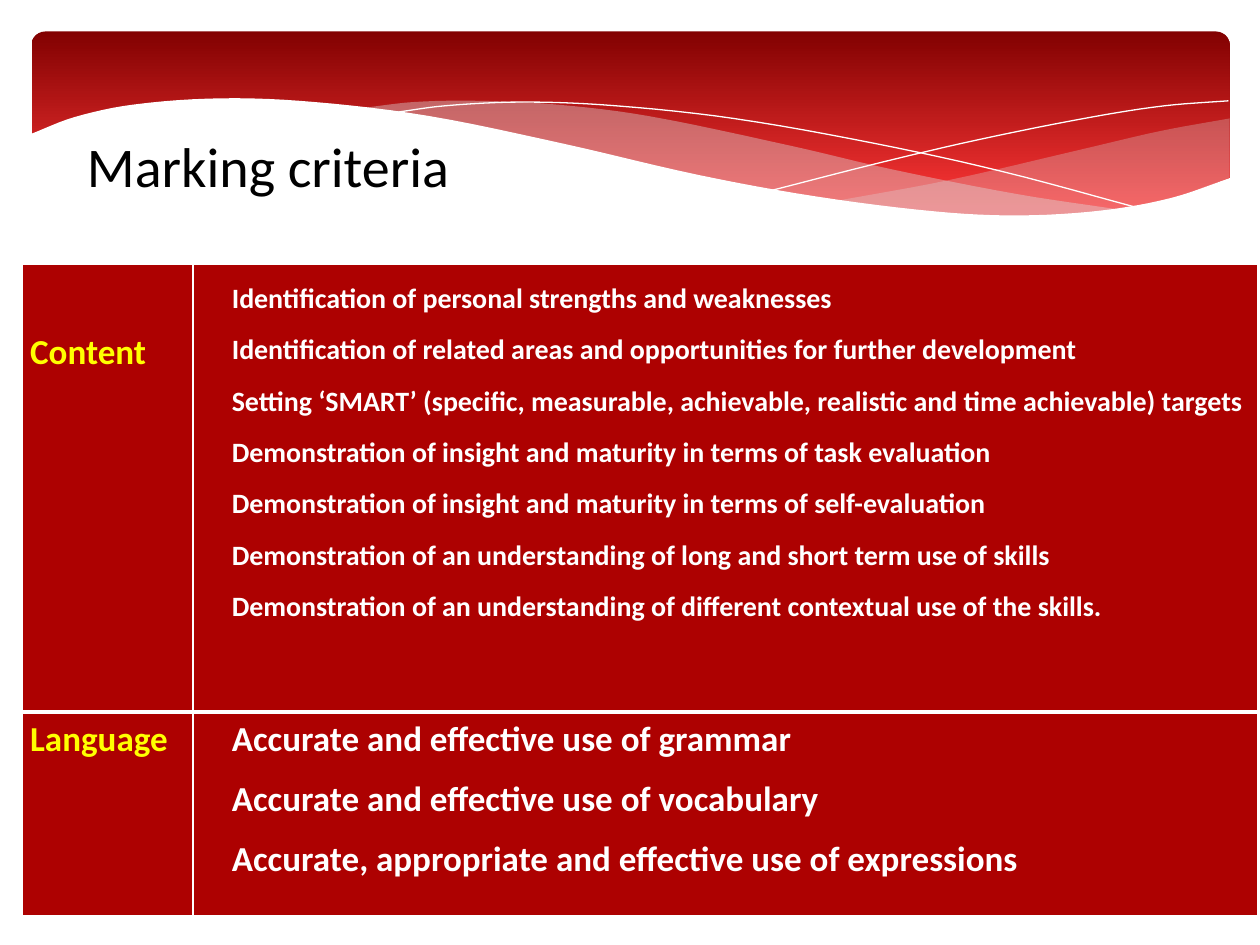
"""Build the marking criteria slide with a wave banner and a two-row table."""

from dataclasses import dataclass

import lxml.etree
import pptx
import pptx.dml.color
import pptx.enum.shapes
import pptx.enum.text
import pptx.oxml
import pptx.oxml.ns
import pptx.presentation
import pptx.shapes.autoshape
import pptx.slide
import pptx.table
import pptx.util

Inches = pptx.util.Inches
Pt = pptx.util.Pt
RGBColor = pptx.dml.color.RGBColor
Point = tuple[float, float]

FONT = "Calibri"
BLACK = RGBColor(0x00, 0x00, 0x00)
WHITE = RGBColor(0xFF, 0xFF, 0xFF)
YELLOW = RGBColor(0xFF, 0xFF, 0x00)
MIST = RGBColor(0xDE, 0xDE, 0xE0)
CELL_RED = RGBColor(0xAD, 0x01, 0x01)
DARK_RED = RGBColor(0x82, 0x01, 0x01)
BRIGHT_RED = RGBColor(0xFE, 0x37, 0x37)
STEPS_PER_SPAN = 6


@dataclass(frozen=True)
class Wave:
    """A smooth upper edge, closed by a lower edge when it is filled."""

    upper: tuple[Point, ...]
    lower: tuple[Point, ...] = ()
    fill: RGBColor | None = None
    opacity: int = 100


@dataclass(frozen=True)
class Criterion:
    """A table row with its label and the points that are marked."""

    label: str
    points: tuple[str, ...]
    height: float
    label_top: float
    size: int
    line_spacing: float
    gap: int
    top_border: int
    bottom_border: int


WAVES = (
    Wave(
        ((6.61, 1.6), (7.53, 1.43), (8.61, 1.18), (9.21, 1.04), (9.76, 0.94)),
        ((9.76, 1.41), (9.35, 1.56), (8.89, 1.66), (8.44, 1.71), (7.92, 1.72), (7.32, 1.68), (6.61, 1.6)),
        MIST, 29,
    ),
    Wave(
        ((2.86, 0.86), (3.28, 0.81), (3.8, 0.8), (4.42, 0.83), (5.14, 0.92),
         (6.29, 1.16), (7.06, 1.34), (8.07, 1.54), (8.93, 1.67)),
        ((8.93, 1.67), (8.48, 1.72), (7.96, 1.73), (7.22, 1.68), (6.34, 1.56),
         (5.3, 1.35), (4.49, 1.16), (3.62, 0.97), (2.86, 0.86)),
        MIST, 40,
    ),
    Wave(((3.09, 0.9), (3.53, 0.84), (4.16, 0.81), (4.89, 0.84), (5.82, 0.94),
          (6.95, 1.14), (7.95, 1.36), (9.07, 1.66))),
    Wave(((6.13, 1.51), (6.95, 1.3), (7.76, 1.11), (8.66, 0.93), (9.24, 0.84), (9.75, 0.8))),
    Wave(
        ((0.23, 1.07), (0.59, 0.93), (1.06, 0.83), (1.77, 0.78), (2.5, 0.81),
         (3.4, 0.92), (4.47, 1.14), (5.55, 1.39), (6.48, 1.56), (7.44, 1.68),
         (8.09, 1.71), (8.75, 1.67), (9.3, 1.57), (9.77, 1.41)),
        ((9.77, 2.24), (0.23, 2.24)),
        WHITE,
    ),
)

CRITERIA = (
    Criterion(
        "Content",
        (
            "Identification of personal strengths and weaknesses",
            "Identification of related areas and opportunities for further development",
            "Setting ‘SMART’ (specific, measurable, achievable, realistic and time achievable) targets",
            "Demonstration of insight and maturity in terms of task evaluation",
            "Demonstration of insight and maturity in terms of self-evaluation",
            "Demonstration of an understanding of long and short term use of skills",
            "Demonstration of an understanding of different contextual use of the skills.",
        ),
        3.55, 0.48, 16, 1.5, 0, 1, 3,
    ),
    Criterion(
        "Language",
        (
            "Accurate and effective use of grammar",
            "Accurate and effective use of vocabulary",
            "Accurate, appropriate and effective use of expressions",
        ),
        1.62, 0, 20, 1.15, 6, 3, 1,
    ),
)


def smooth(knots: tuple[Point, ...]) -> list[Point]:
    """Return points on a cubic curve through the knots."""
    last = len(knots) - 1
    slopes = []
    for index in range(len(knots)):
        (x0, y0), (x1, y1) = knots[max(index - 1, 0)], knots[min(index + 1, last)]
        slopes.append((y1 - y0) / (x1 - x0))
    points = [knots[0]]
    for index in range(last):
        (x0, y0), (x1, y1) = knots[index], knots[index + 1]
        span = x1 - x0
        for step in range(1, STEPS_PER_SPAN + 1):
            t = step / STEPS_PER_SPAN
            rise = (3 - 2 * t) * t * t
            bend = slopes[index] * (1 - t) - slopes[index + 1] * t
            points.append((x0 + span * t, y0 + (y1 - y0) * rise + span * t * (1 - t) * bend))
    return points


def add_banner(slide: pptx.slide.Slide) -> None:
    """Draw the rounded gradient panel behind the waves."""
    banner = slide.shapes.add_shape(
        pptx.enum.shapes.MSO_SHAPE.ROUNDED_RECTANGLE,
        Inches(0.25), Inches(0.25), Inches(9.51), Inches(1.56),
    )
    banner.adjustments[0] = 0.07
    banner.shadow.inherit = False
    banner.line.fill.background()
    banner.fill.gradient()
    banner.fill.gradient_angle = 270
    for stop, color, position in zip(banner.fill.gradient_stops, (DARK_RED, BRIGHT_RED), (0, 0.9)):
        stop.color.rgb = color
        stop.position = position


def add_wave(slide: pptx.slide.Slide, wave: Wave) -> None:
    """Draw one wave as a filled band or a thin white line."""
    points = smooth(wave.upper) + (smooth(wave.lower) if wave.lower else [])
    corners = [(Inches(x), Inches(y)) for x, y in points]
    builder = slide.shapes.build_freeform(*corners[0])
    builder.add_line_segments(corners[1:], close=wave.fill is not None)
    shape = builder.convert_to_shape()
    shape.shadow.inherit = False
    if wave.fill is None:
        shape.fill.background()
        shape.line.color.rgb = WHITE
        shape.line.width = Pt(0)
        return
    shape.line.fill.background()
    shape.fill.solid()
    shape.fill.fore_color.rgb = wave.fill
    if wave.opacity < 100:
        color = shape.element.spPr.find(".//" + pptx.oxml.ns.qn("a:srgbClr"))
        lxml.etree.SubElement(color, pptx.oxml.ns.qn("a:alpha"), val=str(wave.opacity * 1000))


def set_borders(cell: pptx.table._Cell, top: int, bottom: int) -> None:
    """Give a cell white borders with widths in points."""
    properties = cell._tc.get_or_add_tcPr()
    for index, (side, width) in enumerate((("L", 1), ("R", 1), ("T", top), ("B", bottom))):
        border = pptx.oxml.parse_xml(
            f'<a:ln{side} {pptx.oxml.ns.nsdecls("a")} w="{Pt(width)}"><a:solidFill>'
            f'<a:srgbClr val="{WHITE}"/></a:solidFill></a:ln{side}>'
        )
        properties.insert(index, border)


def fill_cell(cell: pptx.table._Cell, lines: tuple[str, ...], criterion: Criterion, is_label: bool) -> None:
    """Write and format the lines of one table cell."""
    cell.margin_left = Inches(0.06 if is_label else 0.31)
    cell.margin_right = Inches(0.06)
    cell.margin_top = Inches(criterion.label_top if is_label else 0)
    cell.margin_bottom = 0
    cell.fill.solid()
    cell.fill.fore_color.rgb = CELL_RED
    set_borders(cell, criterion.top_border, criterion.bottom_border)
    cell.text = "\n".join(lines)
    for index, paragraph in enumerate(cell.text_frame.paragraphs):
        paragraph.line_spacing = 1.15 if is_label else criterion.line_spacing
        paragraph.space_before = Pt(criterion.gap if index else 6)
        paragraph.font.name = FONT
        paragraph.font.bold = True
        paragraph.font.size = Pt(20 if is_label else criterion.size)
        paragraph.font.color.rgb = YELLOW if is_label else WHITE


def add_criteria_table(slide: pptx.slide.Slide) -> None:
    """Add the table of marking criteria."""
    frame = slide.shapes.add_table(
        len(CRITERIA), 2, Inches(0.18), Inches(2.1), Inches(9.8), Inches(5.17)
    )
    table = frame.table
    table.first_row = False
    table.horz_banding = False
    for column, width in zip(table.columns, (1.35, 8.45)):
        column.width = Inches(width)
    for index, criterion in enumerate(CRITERIA):
        table.rows[index].height = Inches(criterion.height)
        fill_cell(table.cell(index, 0), (criterion.label,), criterion, True)
        fill_cell(table.cell(index, 1), criterion.points, criterion, False)


def place_title(slide: pptx.slide.Slide) -> None:
    """Format the title and bring it in front of the waves."""
    title = slide.shapes.title
    title.left, title.top, title.width, title.height = map(Inches, (0.59, 0.99, 3.86, 0.64))
    title.text_frame.text = "Marking criteria"
    title.text_frame.vertical_anchor = pptx.enum.text.MSO_ANCHOR.TOP
    paragraph = title.text_frame.paragraphs[0]
    paragraph.alignment = pptx.enum.text.PP_ALIGN.LEFT
    paragraph.font.name = FONT
    paragraph.font.size = Pt(32)
    paragraph.font.color.rgb = BLACK
    title.element.getparent().append(title.element)


def main() -> None:
    """Create and save the presentation."""
    presentation = pptx.Presentation()
    presentation.slide_width, presentation.slide_height = Inches(10), Inches(7.5)
    slide = presentation.slides.add_slide(presentation.slide_layouts[5])
    add_banner(slide)
    for wave in WAVES:
        add_wave(slide, wave)
    add_criteria_table(slide)
    place_title(slide)
    presentation.save("out.pptx")


if __name__ == "__main__":
    main()
